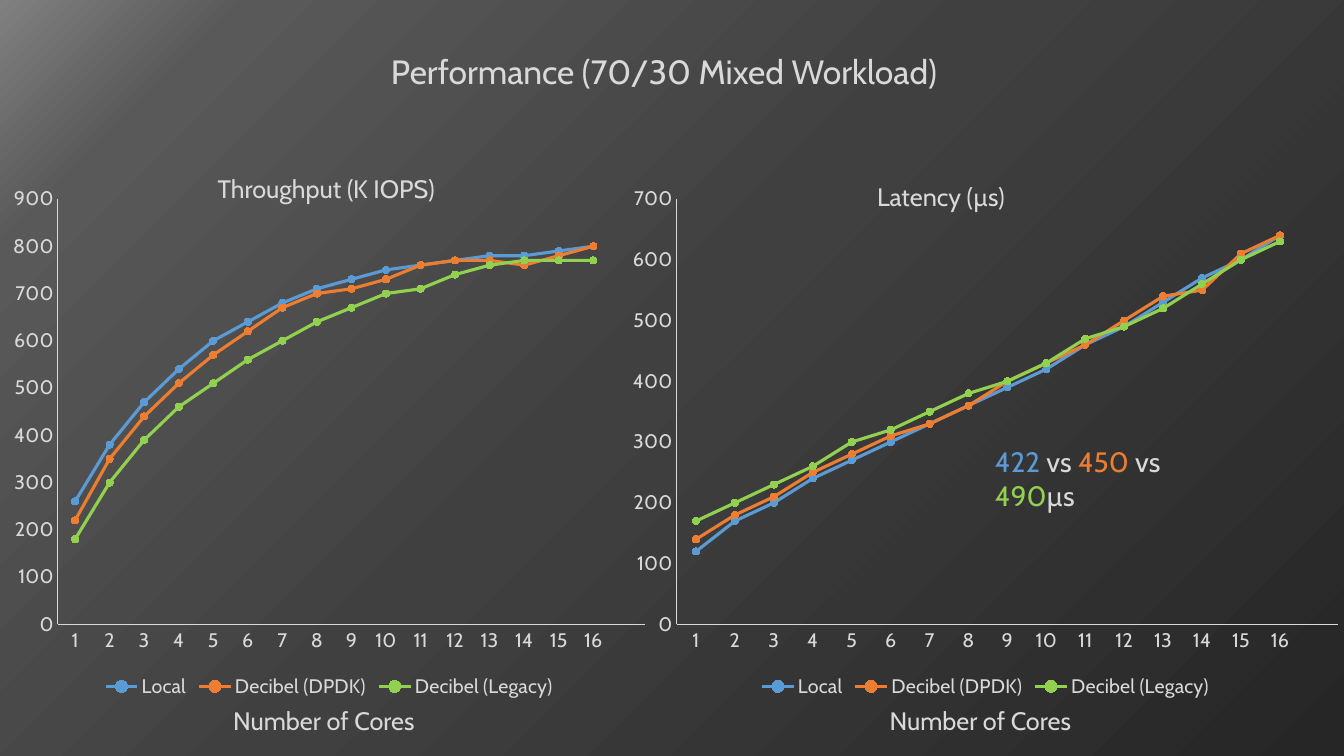
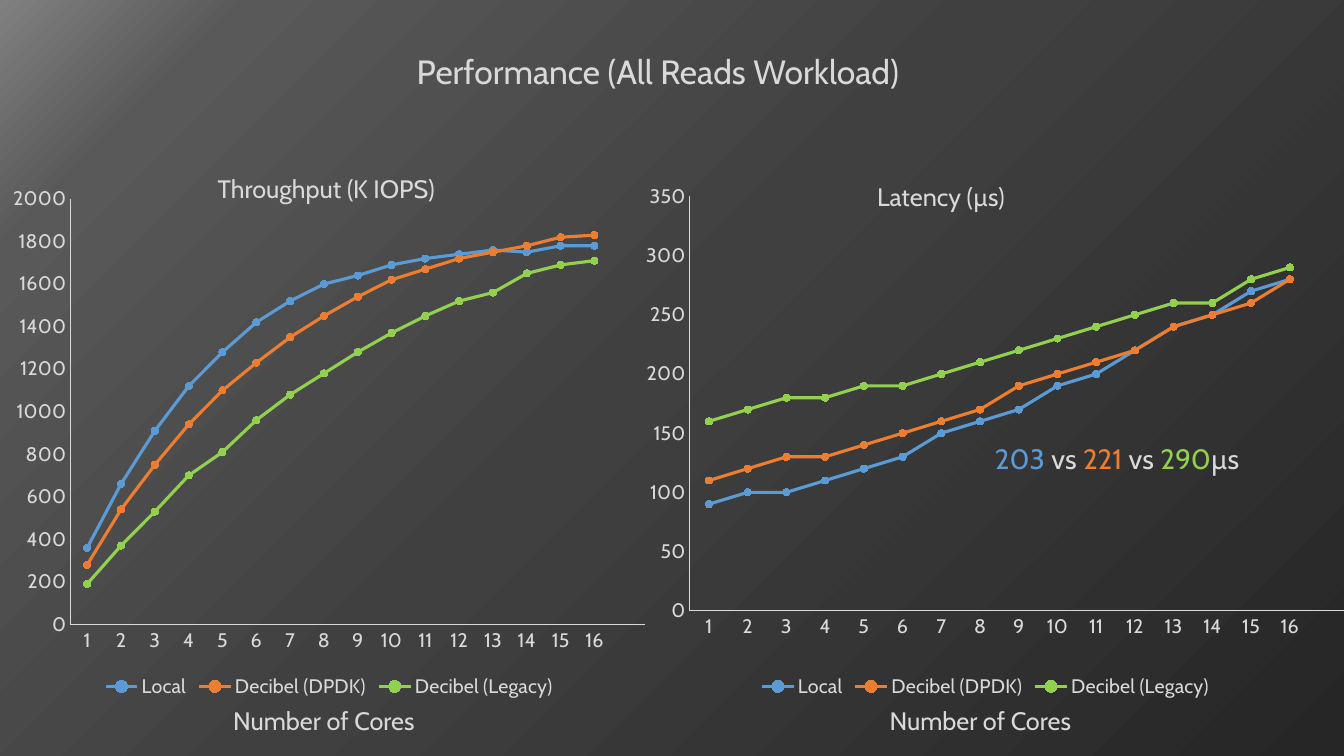
from lxml import etree
from pptx import Presentation
from pptx.chart.data import CategoryChartData
from pptx.dml.color import RGBColor
from pptx.enum.chart import XL_CHART_TYPE, XL_LEGEND_POSITION, XL_MARKER_STYLE, XL_TICK_MARK
from pptx.enum.text import MSO_AUTO_SIZE
from pptx.oxml.ns import qn
from pptx.util import Inches, Pt

COLORS = {
    "text": "D9D9D9",
    "Local": "5B9BD5",
    "Decibel (DPDK)": "ED7D31",
    "Decibel (Legacy)": "92D050",
}
SYSTEMS = ["Local", "Decibel (DPDK)", "Decibel (Legacy)"]
BACKGROUND_STOPS = [(0, "808080"), (12, "595959"), (48, "404040"), (100, "262626")]
FONT = "Cabin"
SLIDE_WIDTH, SLIDE_HEIGHT = 13.33, 7.5
# The last category stays empty, leaving room to the right of the lines.
CORES = [str(count) for count in range(1, 17)] + [""]

# Box is left, top, width, height; heading is the offset from the box corner.
PANELS = {
    "throughput": {"heading": "Throughput (K IOPS)", "box": (0, 1.75, 6.53, 5.22),
                   "heading_offset": (2.06, -0.08), "heading_width": 2.49},
    "latency": {"heading": "Latency (µs)", "box": (6.13, 1.75, 7.29, 5.22),
                "heading_offset": (2.47, 0), "heading_width": 1.52},
}

# Measures are drawn in the order given; plot is a box in inches inside the chart.
WORKLOADS = [
    {
        "title": "Performance (70/30 Mixed Workload)",
        "title_width": 5.77,
        "note": ["422", "450", "490"],
        "note_box": (9.77, 4.36, 2.3, 0.44),
        "measures": {
            "throughput": {
                "maximum": 900, "step": 100,
                "values": [
                    [260, 380, 470, 540, 600, 640, 680, 710,
                     730, 750, 760, 770, 780, 780, 790, 800],
                    [220, 350, 440, 510, 570, 620, 670, 700,
                     710, 730, 760, 770, 770, 760, 780, 800],
                    [180, 300, 390, 460, 510, 560, 600, 640,
                     670, 700, 710, 740, 760, 770, 770, 770],
                ],
            },
            "latency": {
                "maximum": 700, "step": 100,
                "values": [
                    [120, 170, 200, 240, 270, 300, 330, 360,
                     390, 420, 460, 490, 530, 570, 600, 640],
                    [140, 180, 210, 250, 280, 310, 330, 360,
                     400, 430, 460, 500, 540, 550, 610, 640],
                    [170, 200, 230, 260, 300, 320, 350, 380,
                     400, 430, 470, 490, 520, 560, 600, 630],
                ],
            },
        },
    },
    {
        "title": "Performance (All Reads Workload)",
        "title_width": 5.26,
        "note": ["203", "221", "290"],
        "note_box": (9.77, 4.33, 2.66, 0.44),
        "measures": {
            "latency": {
                "maximum": 350, "step": 50,
                "plot": (0.71, 0.2, 6.53, 4.11),
                "values": [
                    [90, 100, 100, 110, 120, 130, 150, 160,
                     170, 190, 200, 220, 240, 250, 270, 280],
                    [110, 120, 130, 130, 140, 150, 160, 170,
                     190, 200, 210, 220, 240, 250, 260, 280],
                    [160, 170, 180, 180, 190, 190, 200, 210,
                     220, 230, 240, 250, 260, 260, 280, 290],
                ],
            },
            "throughput": {
                "maximum": 2000, "step": 200,
                "values": [
                    [360, 660, 910, 1120, 1280, 1420, 1520, 1600,
                     1640, 1690, 1720, 1740, 1760, 1750, 1780, 1780],
                    [280, 540, 750, 940, 1100, 1230, 1350, 1450,
                     1540, 1620, 1670, 1720, 1750, 1780, 1820, 1830],
                    [190, 370, 530, 700, 810, 960, 1080, 1180,
                     1280, 1370, 1450, 1520, 1560, 1650, 1690, 1710],
                ],
            },
        },
    },
]


def rgb(name):
    return RGBColor.from_string(COLORS[name])


def set_all(target, values):
    for name, value in values.items():
        setattr(target, name, value)


def style_font(font, size, color="text"):
    set_all(font, {"name": FONT, "size": Pt(size)})
    font.color.rgb = rgb(color)


def paint_background(master):
    fill = master.background.fill
    fill.gradient()
    fill.gradient_angle = 315
    stops = master.element.find(".//" + qn("a:gsLst"))
    for stop in list(stops):
        stops.remove(stop)
    for percent, color in BACKGROUND_STOPS:
        stop = etree.SubElement(stops, qn("a:gs"), pos=str(percent * 1000))
        etree.SubElement(stop, qn("a:srgbClr"), val=color)


def add_label(slide, box, runs, size, wrap=False):
    """Add one paragraph of text; runs are pairs of wording and colour name."""
    frame = slide.shapes.add_textbox(*map(Inches, box)).text_frame
    set_all(frame, {"word_wrap": wrap, "auto_size": MSO_AUTO_SIZE.SHAPE_TO_FIT_TEXT})
    for wording, color in runs:
        run = frame.paragraphs[0].add_run()
        run.text = wording
        style_font(run.font, size, color)


def clear_fill(parent_properties):
    etree.SubElement(parent_properties, qn("a:noFill"))
    line = etree.SubElement(parent_properties, qn("a:ln"))
    etree.SubElement(line, qn("a:noFill"))


def make_transparent(chart):
    chart_area = etree.Element(qn("c:spPr"))
    chart.element.find(qn("c:chart")).addnext(chart_area)
    plot_area = etree.SubElement(chart.element.find(".//" + qn("c:plotArea")), qn("c:spPr"))
    for properties in (chart_area, plot_area):
        clear_fill(properties)


def place_plot(chart, plot, width, height):
    """Fix the inner plot area to a box inside a chart of the given size."""
    plot_area = chart.element.find(".//" + qn("c:plotArea"))
    for layout in plot_area.findall(qn("c:layout")):
        plot_area.remove(layout)
    layout = etree.Element(qn("c:layout"))
    plot_area.insert(0, layout)
    manual = etree.SubElement(layout, qn("c:manualLayout"))
    settings = {"layoutTarget": "inner", "xMode": "edge", "yMode": "edge"}
    for name, length, whole in zip("xywh", plot, (width, height) * 2):
        settings[name] = length / whole
    for name, value in settings.items():
        etree.SubElement(manual, qn("c:" + name), val=str(value))


def style_axis(axis):
    set_all(axis, {
        "has_major_gridlines": False,
        "major_tick_mark": XL_TICK_MARK.NONE,
        "minor_tick_mark": XL_TICK_MARK.NONE,
    })
    style_font(axis.tick_labels.font, 14)
    axis.format.line.width = Pt(0.75)
    axis.format.line.color.rgb = rgb("text")


def style_series(series):
    color = rgb(series.name)
    series.smooth = False
    series.format.line.width = Pt(2.25)
    series.format.line.color.rgb = color
    set_all(series.marker, {"style": XL_MARKER_STYLE.CIRCLE, "size": 5})
    series.marker.format.fill.solid()
    series.marker.format.fill.fore_color.rgb = color
    series.marker.format.line.color.rgb = color


def add_line_chart(slide, box, measure):
    data = CategoryChartData()
    data.categories = CORES
    for system, values in zip(SYSTEMS, measure["values"]):
        data.add_series(system, values + [None])
    chart = slide.shapes.add_chart(
        XL_CHART_TYPE.LINE_MARKERS, *map(Inches, box), data).chart
    set_all(chart, {"has_title": False, "has_legend": True})
    set_all(chart.font, {"name": "Calibri", "size": Pt(10)})
    set_all(chart.legend, {"position": XL_LEGEND_POSITION.BOTTOM, "include_in_layout": False})
    style_font(chart.legend.font, 14)
    for axis in (chart.category_axis, chart.value_axis):
        style_axis(axis)
    set_all(chart.value_axis, {
        "minimum_scale": 0,
        "maximum_scale": measure["maximum"],
        "major_unit": measure["step"],
    })
    chart.plots[0].vary_by_categories = False
    for series in chart.plots[0].series:
        style_series(series)
    make_transparent(chart)
    if "plot" in measure:
        place_plot(chart, measure["plot"], *box[2:])


def add_panel(slide, panel, measure):
    """Place a chart with its heading above and the axis caption centred below."""
    left, top, width, height = panel["box"]
    add_line_chart(slide, panel["box"], measure)
    across, down = panel["heading_offset"]
    add_label(slide, (left + across, top + down, panel["heading_width"], 0.4),
              [(panel["heading"], "text")], 18)
    caption_width = 2.1
    add_label(slide, (left + (width - caption_width) / 2, top + height - 0.02, caption_width, 0.4),
              [("Number of Cores", "text")], 18)


def add_note(slide, box, latencies):
    first, second, third = zip(latencies, SYSTEMS)
    versus = (" vs ", "text")
    add_label(slide, box, [first, versus, second, versus, third, ("µs", "text")], 20, wrap=True)


def add_workload_slide(prs, workload):
    slide = prs.slides.add_slide(prs.slide_layouts[6])
    for name, measure in workload["measures"].items():
        add_panel(slide, PANELS[name], measure)
    title_width = workload["title_width"]
    add_label(slide, ((SLIDE_WIDTH - title_width) / 2, 0.46, title_width, 0.5),
              [(workload["title"], "text")], 24)
    add_note(slide, workload["note_box"], workload["note"])


def main():
    prs = Presentation()
    set_all(prs, {"slide_width": Inches(SLIDE_WIDTH), "slide_height": Inches(SLIDE_HEIGHT)})
    paint_background(prs.slide_master)
    for workload in WORKLOADS:
        add_workload_slide(prs, workload)
    prs.save("out.pptx")


if __name__ == "__main__":
    main()
